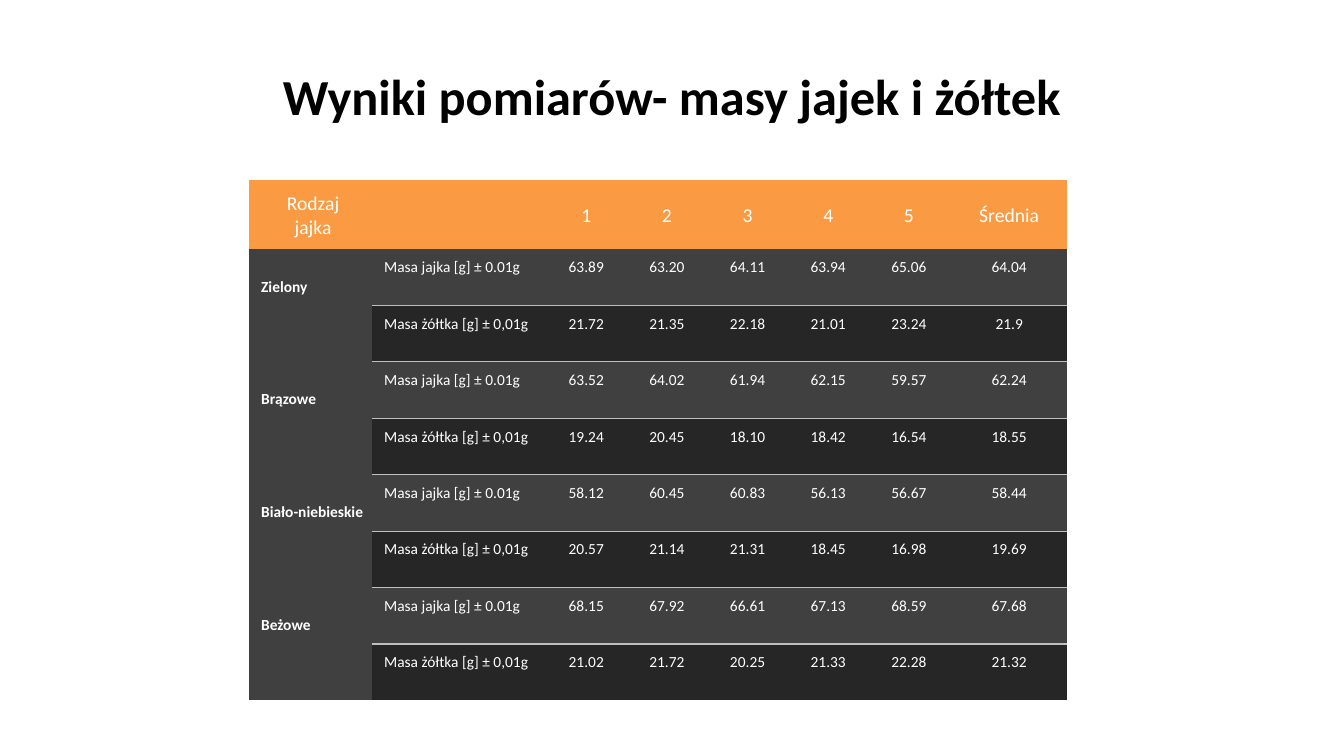
"""Build the slide with the table of egg and yolk masses."""
from typing import NamedTuple

from lxml.etree import SubElement
from pptx import Presentation
from pptx.dml.color import RGBColor
from pptx.enum.text import MSO_ANCHOR as ANCHOR, MSO_AUTO_SIZE as AUTO, PP_ALIGN as ALIGN
from pptx.oxml.ns import qn
from pptx.util import Inches, Pt

ORANGE, GREY, DARK, RULE = "FA9A42", "404040", "262626", "BFBFBF"
BLACK, WHITE = "000000", "FFFFFF"
NO_STYLE = "{2D5ABB26-0587-4C30-8999-92F81FD0307C}"
COL_WIDTHS = [1.22, 1.7] + [0.8] * 5 + [1.19]
ROW_HEIGHTS = [0.68] + [0.56] * 8
HEADERS = ["Rodzaj\njajka", "", "1", "2", "3", "4", "5", "Średnia"]
MARGINS = {"margin_left": 0.12, "margin_top": 0.09, "margin_right": 0.07, "margin_bottom": 0.07}
NAME_TOP = 0.28


class Egg(NamedTuple):
    name: str
    masses: list[str]
    yolks: list[str]


class Style(NamedTuple):
    fill: str
    size: float = 11
    bold: bool = False
    align: ALIGN = ALIGN.CENTER
    anchor: ANCHOR = ANCHOR.TOP
    top: float = MARGINS["margin_top"]
    border: str = ""


EGGS = [
    Egg("Zielony", ["63.89", "63.20", "64.11", "63.94", "65.06", "64.04"],
        ["21.72", "21.35", "22.18", "21.01", "23.24", "21.9"]),
    Egg("Brązowe", ["63.52", "64.02", "61.94", "62.15", "59.57", "62.24"],
        ["19.24", "20.45", "18.10", "18.42", "16.54", "18.55"]),
    Egg("Biało-niebieskie", ["58.12", "60.45", "60.83", "56.13", "56.67", "58.44"],
        ["20.57", "21.14", "21.31", "18.45", "16.98", "19.69"]),
    Egg("Beżowe", ["68.15", "67.92", "66.61", "67.13", "68.59", "67.68"],
        ["21.02", "21.72", "20.25", "21.33", "22.28", "21.32"]),
]
HEADER = Style(ORANGE, size=14, anchor=ANCHOR.MIDDLE)
NAME = Style(GREY, bold=True, align=ALIGN.LEFT, top=NAME_TOP)
MASS = Style(GREY, border="a:lnB")
YOLK = Style(DARK, border="a:lnT")


def rgb(color: str) -> RGBColor:
    return RGBColor.from_string(color)


def set_attrs(obj, values: dict) -> None:
    for name, value in values.items():
        setattr(obj, name, value)


def format_text(tf, color: str, size: float, bold: bool, align: ALIGN) -> None:
    for p in tf.paragraphs:
        p.alignment = align
        for r in p.runs:
            set_attrs(r.font, {"name": "Calibri", "size": Pt(size), "bold": bold})
            r.font.color.rgb = rgb(color)


def add_border(cell, tag: str) -> None:
    ln = SubElement(cell._tc.get_or_add_tcPr(), qn(tag), w=str(Pt(1)))
    fill = SubElement(ln, qn("a:solidFill"))
    SubElement(fill, qn("a:srgbClr"), val=RULE)


def fill_cell(cell, text: str, style: Style) -> None:
    if style.border:
        add_border(cell, style.border)
    cell.fill.solid()
    cell.fill.fore_color.rgb = rgb(style.fill)
    margins = MARGINS | {"margin_top": style.top}
    set_attrs(cell, {side: Inches(size) for side, size in margins.items()})
    cell.vertical_anchor = style.anchor
    cell.text = text
    format_text(cell.text_frame, WHITE, style.size, style.bold, style.align)


def fill_row(table, row: int, label: str, values: list[str], style: Style) -> None:
    fill_cell(table.cell(row, 1), label, style._replace(align=ALIGN.LEFT))
    for col, value in enumerate(values, 2):
        fill_cell(table.cell(row, col), value, style)


def add_title(s) -> None:
    sp = s.shapes.title
    set_attrs(sp, {"left": Inches(1.89), "top": Inches(0.55),
                   "width": Inches(9.55), "height": Inches(0.75)})
    tf = sp.text_frame
    tf.text = "Wyniki pomiarów- masy jajek i żółtek"
    set_attrs(tf, {"vertical_anchor": ANCHOR.BOTTOM, "auto_size": AUTO.NONE, "word_wrap": True})
    tf.paragraphs[0].line_spacing = 0.9
    format_text(tf, BLACK, 36, True, ALIGN.CENTER)


def add_results(s) -> None:
    frame = s.shapes.add_table(len(ROW_HEIGHTS), len(COL_WIDTHS), Inches(2.47), Inches(1.79),
                               Inches(sum(COL_WIDTHS)), Inches(sum(ROW_HEIGHTS)))
    table = frame.table
    table.horz_banding = False
    table._tbl.tblPr.find(qn("a:tableStyleId")).text = NO_STYLE
    for column, width in zip(table.columns, COL_WIDTHS):
        column.width = Inches(width)
    for row, height in zip(table.rows, ROW_HEIGHTS):
        row.height = Inches(height)
    for col, text in enumerate(HEADERS):
        fill_cell(table.cell(0, col), text, HEADER)
    for i, egg in enumerate(EGGS):
        row = 1 + 2 * i
        table.cell(row, 0).merge(table.cell(row + 1, 0))
        fill_cell(table.cell(row, 0), egg.name, NAME)
        fill_row(table, row, "Masa jajka [g] ± 0.01g", egg.masses, MASS)
        fill_row(table, row + 1, "Masa żółtka [g] ± 0,01g", egg.yolks, YOLK)


def main() -> None:
    prs = Presentation()
    set_attrs(prs, {"slide_width": Inches(13.33), "slide_height": Inches(7.5)})
    s = prs.slides.add_slide(prs.slide_layouts[5])
    add_title(s)
    add_results(s)
    prs.save("out.pptx")


if __name__ == "__main__":
    main()
